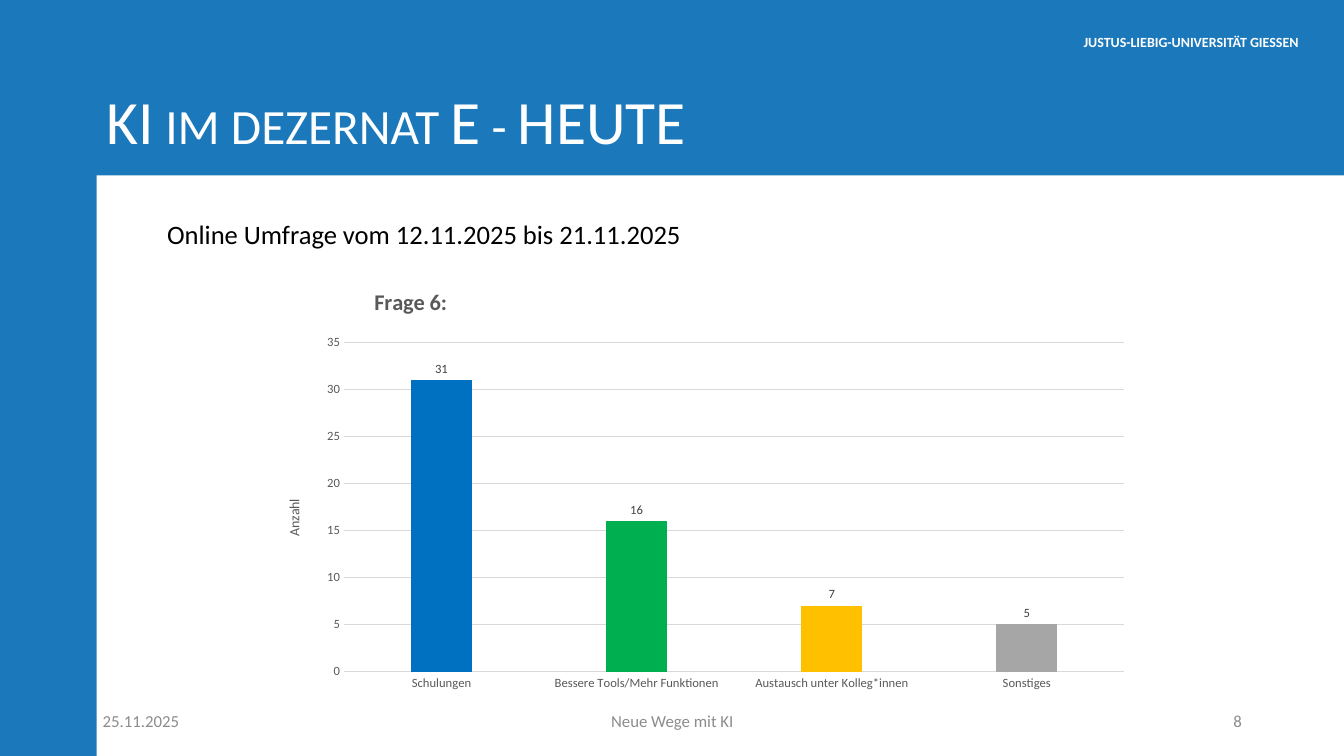
from dataclasses import dataclass

from lxml.etree import SubElement
from pptx import Presentation
from pptx.chart.data import CategoryChartData
from pptx.dml.color import RGBColor
from pptx.enum.chart import XL_CHART_TYPE, XL_LABEL_POSITION, XL_TICK_MARK
from pptx.enum.shapes import MSO_SHAPE
from pptx.enum.text import MSO_ANCHOR, PP_ALIGN
from pptx.oxml.ns import qn
from pptx.util import Inches, Pt

WIDTH, HEIGHT = Inches(13.33), Inches(7.5)


@dataclass(frozen=True)
class Theme:
    face: str = "Calibri"
    blue: str = "1A78BB"
    white: str = "FFFFFF"
    black: str = "000000"
    footer_gray: str = "8C8C8C"
    axis_gray: str = "595959"
    label_gray: str = "404040"
    grid_gray: str = "D9D9D9"
    heading_size: float = 44
    body_size: float = 19
    chart_title_size: float = 16
    footer_size: float = 12
    small_size: float = 10
    axis_size: float = 9


THEME = Theme()

ANSWERS = [
    ("Schulungen", 31, "0070C0"),
    ("Bessere Tools/Mehr Funktionen", 16, "00B050"),
    ("Austausch unter Kolleg*innen", 7, "FFC000"),
    ("Sonstiges", 5, "A6A6A6"),
]


def area(left, top, width, height):
    return (int(WIDTH * left / 100), int(HEIGHT * top / 100),
            int(WIDTH * width / 100), int(HEIGHT * height / 100))


def style_font(font, size, color, bold=False):
    font.name = THEME.face
    font.size = Pt(size)
    font.bold = bold
    font.color.rgb = RGBColor.from_string(color)


def paint(fill, color):
    fill.solid()
    fill.fore_color.rgb = RGBColor.from_string(color)


def draw_line(line, color):
    line.width = Pt(0.75)
    line.color.rgb = RGBColor.from_string(color)


def add_panel(slide, place):
    panel = slide.shapes.add_shape(MSO_SHAPE.RECTANGLE, *place)
    panel.shadow.inherit = False
    paint(panel.fill, THEME.white)
    panel.line.fill.background()


def add_text(slide, place, wording, size, color, align=PP_ALIGN.LEFT,
             anchor=MSO_ANCHOR.TOP, bold=False, spacing=1.0):
    frame = slide.shapes.add_textbox(*place).text_frame
    frame.word_wrap = True
    frame.vertical_anchor = anchor
    paragraph = frame.paragraphs[0]
    paragraph.text = wording
    paragraph.alignment = align
    paragraph.line_spacing = spacing
    style_font(paragraph.font, size, color, bold)
    return paragraph


def add_heading(slide, place, wording):
    heading = add_text(slide, place, wording, THEME.heading_size, THEME.white, spacing=0.9)
    heading.runs[0].font._element.set("cap", "small")


def add_footer(slide):
    columns = [
        (6.9, 22.5, "25.11.2025", PP_ALIGN.LEFT),
        (33.15, 33.75, "Neue Wege mit KI", PP_ALIGN.CENTER),
        (70.65, 22.5, "8", PP_ALIGN.RIGHT),
    ]
    for left, width, wording, align in columns:
        add_text(slide, area(left, 92.67, width, 5.33), wording, THEME.footer_size,
                 THEME.footer_gray, align, MSO_ANCHOR.MIDDLE)


def set_layout(parent, index, **settings):
    for old in parent.findall(qn("c:layout")):
        parent.remove(old)
    layout = SubElement(parent, qn("c:layout"))
    manual = SubElement(layout, qn("c:manualLayout"))
    for name, setting in settings.items():
        SubElement(manual, qn(f"c:{name}")).set("val", str(setting))
    parent.insert(index, layout)


def set_title(title, wording, size, bold, x, y):
    paragraph = title.text_frame.paragraphs[0]
    paragraph.text = wording
    style_font(paragraph.font, size, THEME.axis_gray, bold)
    set_layout(title._element, 1, xMode="edge", yMode="edge", x=x, y=y)


def style_axes(chart):
    for axis in (chart.category_axis, chart.value_axis):
        axis.major_tick_mark = axis.minor_tick_mark = XL_TICK_MARK.NONE
        style_font(axis.tick_labels.font, THEME.axis_size, THEME.axis_gray)
    draw_line(chart.category_axis.format.line, THEME.grid_gray)
    counts = chart.value_axis
    counts.minimum_scale, counts.maximum_scale, counts.major_unit = 0, 35, 5
    counts.format.line.fill.background()
    draw_line(counts.major_gridlines.format.line, THEME.grid_gray)
    set_title(counts.axis_title, "Anzahl", THEME.small_size, False, 0.02, 0.52)


def style_bars(plot):
    plot.gap_width, plot.overlap = 219, -27
    plot.vary_by_categories = False
    plot.has_data_labels = True
    labels = plot.data_labels
    labels.show_value = True
    labels.position = XL_LABEL_POSITION.OUTSIDE_END
    style_font(labels.font, THEME.axis_size, THEME.label_gray)
    for index, (_, _, color) in enumerate(ANSWERS):
        paint(plot.series[0].points[index].format.fill, color)


def add_survey_chart(slide, place):
    survey = CategoryChartData()
    survey.categories = [answer for answer, _, _ in ANSWERS]
    survey.add_series("Anzahl", [count for _, count, _ in ANSWERS])
    chart = slide.shapes.add_chart(XL_CHART_TYPE.COLUMN_CLUSTERED, *place, survey).chart
    style_font(chart.font, THEME.small_size, THEME.black)
    chart.has_legend = False
    set_title(chart.chart_title, "Frage 6:", THEME.chart_title_size, True, 0.12, 0.02)
    style_axes(chart)
    style_bars(chart.plots[0])
    plot_area = chart._chartSpace.find(f".//{qn('c:plotArea')}")
    set_layout(plot_area, 0, layoutTarget="inner", xMode="edge", yMode="edge",
               x=0.09, y=0.16, w=0.89, h=0.77)


def main():
    deck = Presentation()
    deck.slide_width, deck.slide_height = WIDTH, HEIGHT
    slide = deck.slides.add_slide(deck.slide_layouts[6])
    paint(slide.background.fill, THEME.blue)
    add_panel(slide, area(7.2, 23.2, 92.8, 76.8))
    add_text(slide, area(56.25, 4, 41.1, 2.53), "JUSTUS-LIEBIG-UNIVERSITÄT GIESSEN",
             THEME.small_size, THEME.white, PP_ALIGN.RIGHT, bold=True, spacing=0.9)
    add_footer(slide)
    add_text(slide, area(11.7, 28.13, 81.45, 60.93),
             "Online Umfrage vom 12.11.2025 bis 21.11.2025", THEME.body_size, THEME.black)
    add_heading(slide, area(7.2, 11.47, 85.8, 14.13), "KI im dezernat E - HEUTE")
    add_survey_chart(slide, area(19.72, 36.27, 65.25, 56.53))
    deck.save("out.pptx")


if __name__ == "__main__":
    main()
